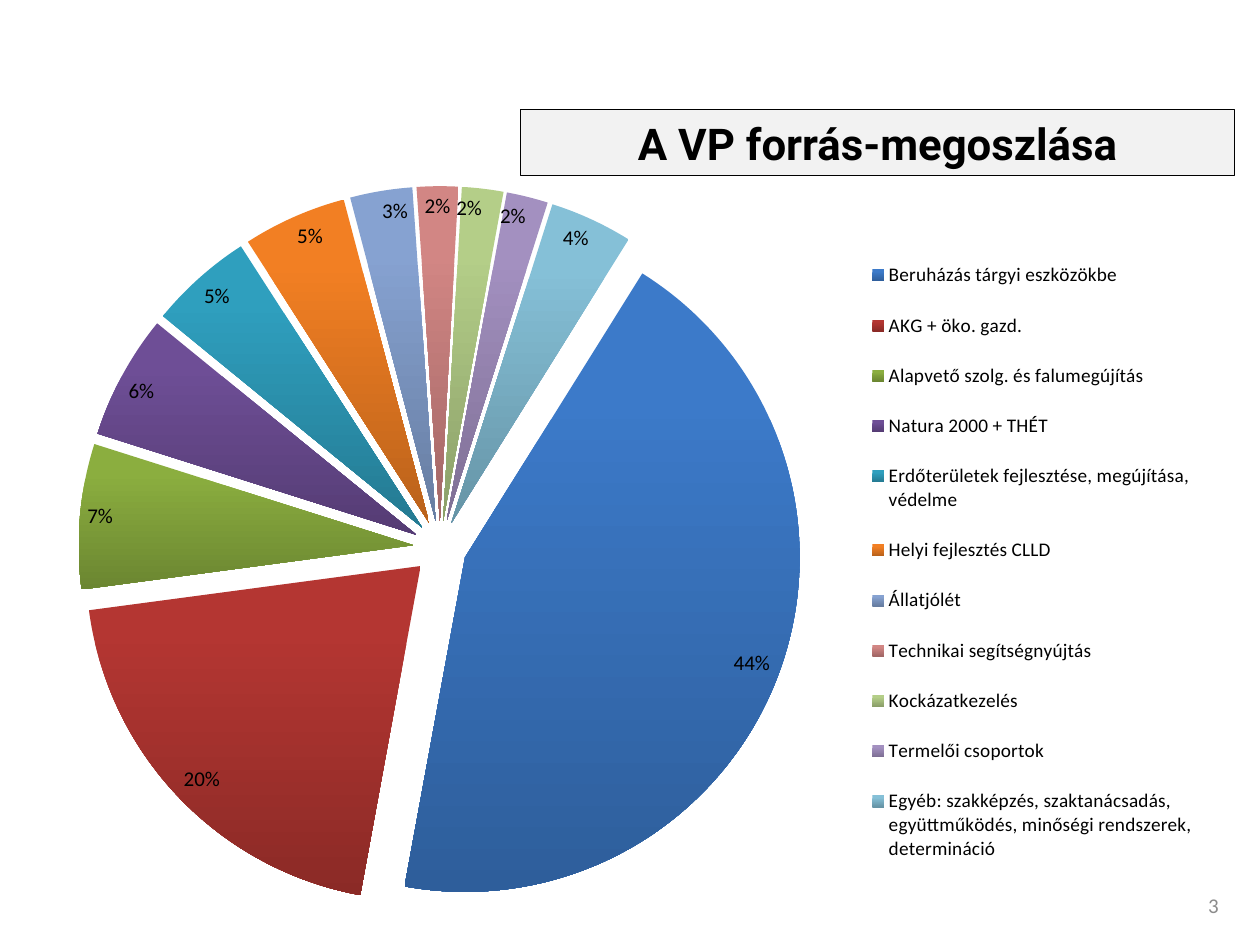
import pptx
import pptx.chart.data
import pptx.dml.color
import pptx.enum.chart
import pptx.enum.shapes
import pptx.enum.text
import pptx.oxml
import pptx.oxml.ns
import pptx.util

WIDTH, HEIGHT = 10, 7.5
CHART_NS = 'xmlns:c="http://schemas.openxmlformats.org/drawingml/2006/chart"'

# Category, percentage, light colour of the slice
SHARES = [
    ("Beruházás tárgyi eszközökbe", 44, "3C7AC9"),
    ("AKG + öko. gazd.", 20, "B43632"),
    ("Alapvető szolg. és falumegújítás", 7, "8BAE3F"),
    ("Natura 2000 + THÉT", 6, "6E4E96"),
    ("Erdőterületek fejlesztése, megújítása, védelme", 5, "2F9FBE"),
    ("Helyi fejlesztés CLLD", 5, "F27F23"),
    ("Állatjólét", 3, "86A2D1"),
    ("Technikai segítségnyújtás", 2, "D28684"),
    ("Kockázatkezelés", 2, "B4CE88"),
    ("Termelői csoportok", 2, "A390C0"),
    ("Egyéb: szakképzés, szaktanácsadás, együttműködés, "
     "minőségi rendszerek, determináció", 4, "85C0D7"),
]


def color(code):
    return pptx.dml.color.RGBColor.from_string(code)


def darker(code, share=0.77):
    channels = (int(code[i:i + 2], 16) for i in (0, 2, 4))
    return "".join(f"{round(channel * share):02X}" for channel in channels)


def box(left, top, width, height):
    """Turn shares of the slide's size into lengths."""
    return [pptx.util.Inches(length) for length in
            (left * WIDTH, top * HEIGHT, width * WIDTH, height * HEIGHT)]


def set_font(font, name, size, code, bold=False):
    font.name = name
    font.size = pptx.util.Pt(size)
    font.bold = bold
    font.color.rgb = color(code)


def write(shape, text, alignment, *font):
    frame = shape.text_frame
    frame.word_wrap = True
    frame.vertical_anchor = pptx.enum.text.MSO_ANCHOR.MIDDLE
    paragraph = frame.paragraphs[0]
    paragraph.text = text
    paragraph.alignment = alignment
    set_font(paragraph.font, *font)


def manual_layout(left, top, width, height, inner=False):
    """Make a chart layout element from shares of the chart's size."""
    target = '<c:layoutTarget val="inner"/>' if inner else ""
    return pptx.oxml.parse_xml(
        f'<c:layout {CHART_NS}><c:manualLayout>{target}'
        '<c:xMode val="edge"/><c:yMode val="edge"/>'
        f'<c:x val="{left}"/><c:y val="{top}"/>'
        f'<c:w val="{width}"/><c:h val="{height}"/>'
        '</c:manualLayout></c:layout>')


def shade_slice(point, code):
    fill = point.format.fill
    fill.gradient()
    fill.gradient_angle = 270
    light, dark = fill.gradient_stops
    light.position, dark.position = 0.2, 1
    light.color.rgb = color(code)
    dark.color.rgb = color(darker(code))
    point.format.line.fill.background()


def add_pie(slide):
    data = pptx.chart.data.CategoryChartData()
    data.categories = [name for name, _, _ in SHARES]
    data.add_series("Series 1", [value for _, value, _ in SHARES])
    chart = slide.shapes.add_chart(
        pptx.enum.chart.XL_CHART_TYPE.PIE,
        *box(0.012, 0.197, 0.961, 0.765), data).chart
    chart.has_title = False
    set_font(chart.font, "Calibri", 18, "000000")

    # Plot: turned, exploded slices
    plot = chart.plots[0]
    plot.vary_by_categories = True
    pie = plot._element
    pie.find(pptx.oxml.ns.qn("c:firstSliceAng")) is None and pie.append(
        pptx.oxml.parse_xml(f'<c:firstSliceAng {CHART_NS} val="32"/>'))
    pie.find(pptx.oxml.ns.qn("c:firstSliceAng")).set("val", "32")
    area = pie.getparent()
    for layout in area.findall(pptx.oxml.ns.qn("c:layout")):
        area.remove(layout)
    area.insert(0, manual_layout(0.033, 0, 0.636, 1, inner=True))
    series = plot.series[0]
    series._element.find(pptx.oxml.ns.qn("c:tx")).addnext(
        pptx.oxml.parse_xml(f'<c:explosion {CHART_NS} val="8"/>'))
    for index, (_, _, code) in enumerate(SHARES):
        shade_slice(series.points[index], code)

    # Percentage labels
    labels = series.data_labels
    labels.show_percentage = True
    labels.show_value = False
    labels.number_format = "0%"
    labels.number_format_is_linked = False
    labels.position = pptx.enum.chart.XL_LABEL_POSITION.INSIDE_END
    set_font(labels.font, "Calibri", 12, "000000")

    # Legend
    chart.has_legend = True
    legend = chart.legend
    legend.position = pptx.enum.chart.XL_LEGEND_POSITION.RIGHT
    legend.include_in_layout = False
    set_font(legend.font, "Calibri", 11, "000000")
    legend._element.find(pptx.oxml.ns.qn("c:legendPos")).addnext(
        manual_layout(0.69, 0.07, 0.3, 0.9))


def add_title(slide, text):
    shape = slide.shapes.add_shape(
        pptx.enum.shapes.MSO_SHAPE.RECTANGLE, *box(0.413, 0.116, 0.567, 0.07))
    shape.shadow.inherit = False
    shape.fill.solid()
    shape.fill.fore_color.rgb = color("F2F2F2")
    shape.line.color.rgb = color("000000")
    shape.line.width = pptx.util.Pt(0.75)
    write(shape, text, pptx.enum.text.PP_ALIGN.CENTER,
          "Roboto", 25, "000000", True)


def add_page_number(slide, number):
    shape = slide.shapes.add_textbox(*box(0.925, 0.931, 0.052, 0.053))
    write(shape, str(number), pptx.enum.text.PP_ALIGN.RIGHT,
          "Calibri", 12, "8C8C8C")


def main():
    presentation = pptx.Presentation()
    presentation.slide_width = pptx.util.Inches(WIDTH)
    presentation.slide_height = pptx.util.Inches(HEIGHT)
    slide = presentation.slides.add_slide(presentation.slide_layouts[6])
    add_page_number(slide, 3)
    add_pie(slide)
    add_title(slide, "A VP forrás-megoszlása")
    presentation.save("out.pptx")


if __name__ == "__main__":
    main()
